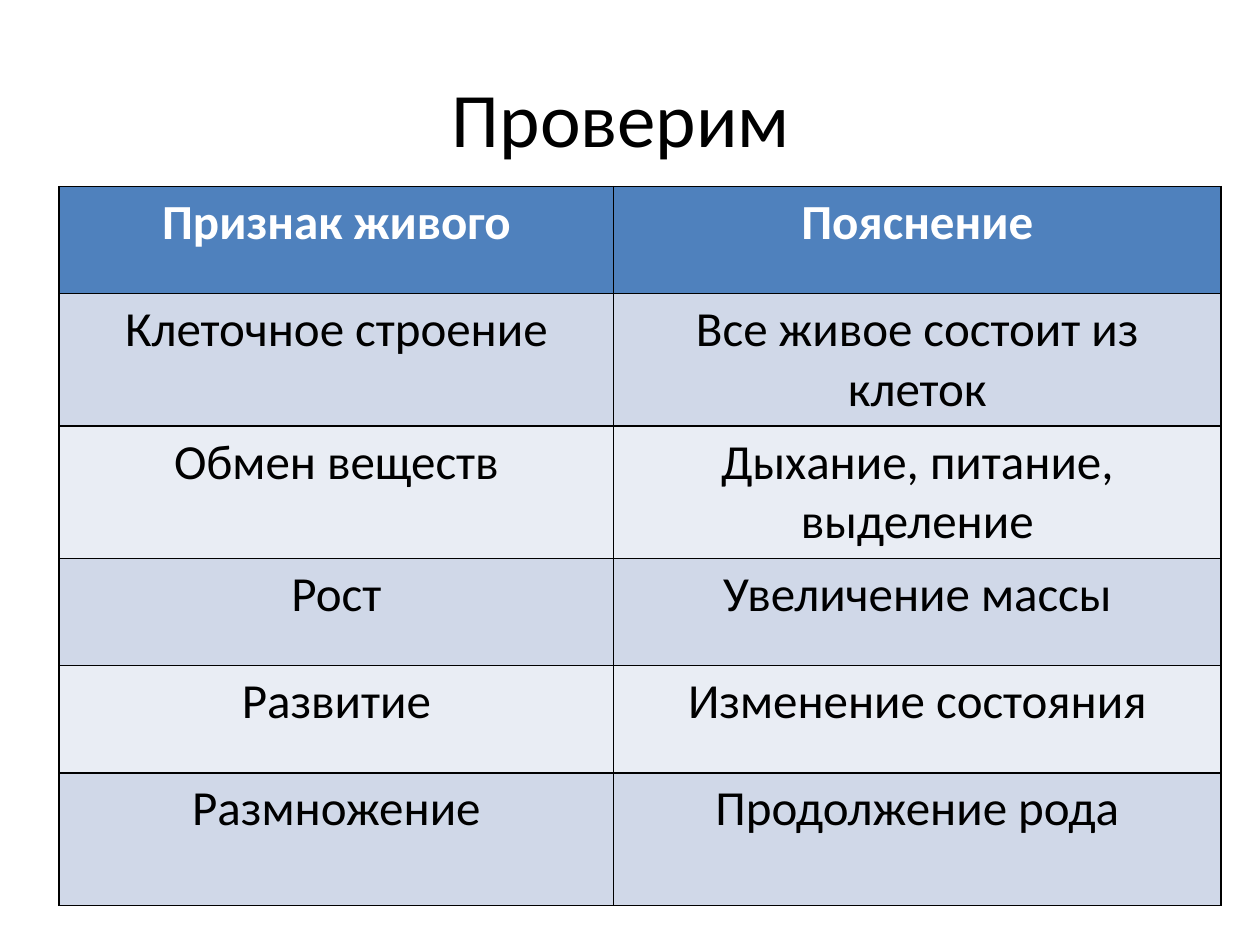
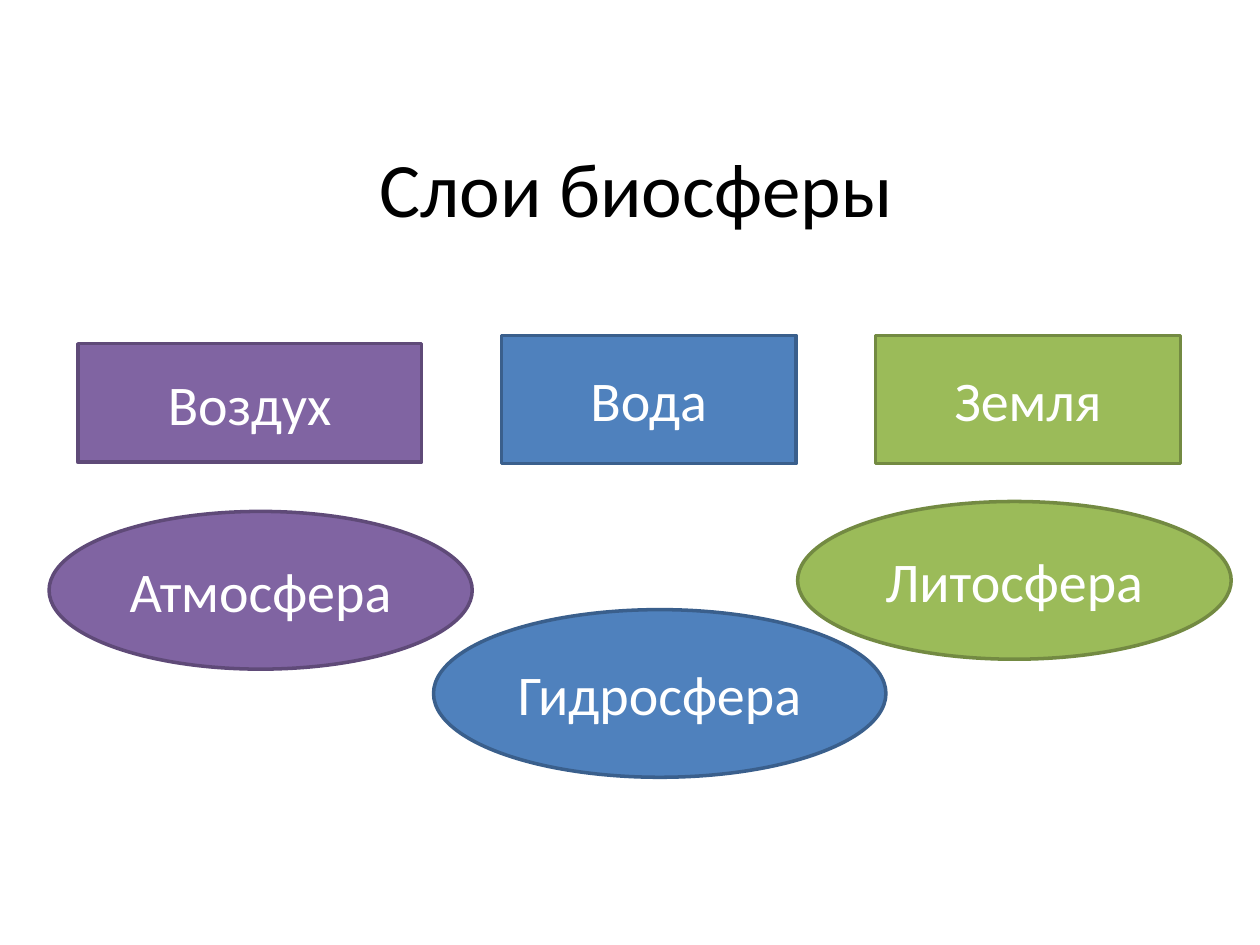
import pptx
import pptx.util
import pptx.dml.color
import pptx.enum.shapes
import pptx.enum.text
import pptx.oxml
import pptx.oxml.ns

Cm = pptx.util.Cm
Pt = pptx.util.Pt
Shape = pptx.enum.shapes.MSO_SHAPE

FONT = "Calibri"
COLORS = {
    "ink": "000000", "paper": "FFFFFF",
    "header": "4F81BD", "band_dark": "D0D8E8", "band_light": "E9EDF4",
    "air": "8064A2", "air_edge": "5F4A78",
    "water": "4F81BD", "water_edge": "3A5F8C",
    "earth": "9BBB59", "earth_edge": "738A42",
}

# Content: lengths in centimetres
TITLE_SIZE = (22.86, 3.18)
SIGNS_TITLE = ("Проверим ", 1.27, 0.76)
SIGNS = [
    ("Признак живого", "Пояснение"),
    ("Клеточное строение", "Все живое состоит из клеток"),
    ("Обмен веществ", "Дыхание, питание, выделение"),
    ("Рост", "Увеличение массы"),
    ("Развитие", "Изменение состояния"),
    ("Размножение", "Продолжение рода"),
]
TABLE_CORNER = (1.19, 3.76)
COLUMN_WIDTHS = (11.18, 12.24)
ROW_HEIGHTS = (2.16, 2.67, 2.67, 2.16, 2.16, 2.67)

LAYERS_TITLE = ("Слои биосферы", 1.4, 2.18)
# Colour, medium and its box, layer and its box
LAYERS = [
    ("air", "Воздух", (1.57, 6.93, 6.93, 2.39),
     "Атмосфера", (0.99, 10.31, 8.53, 3.18)),
    ("water", "Вода", (10.11, 6.76, 5.94, 2.59),
     "Гидросфера", (8.74, 12.29, 9.12, 3.38)),
    ("earth", "Земля", (17.65, 6.76, 6.15, 2.59),
     "Литосфера", (16.08, 10.11, 8.74, 3.18)),
]


def color(name):
    return pptx.dml.color.RGBColor.from_string(COLORS[name])


def write(frame, text, size=32, ink="ink", bold=False, middle=True):
    """Put one centred line of formatted text into a text frame."""
    frame.word_wrap = True
    anchor = pptx.enum.text.MSO_ANCHOR
    frame.vertical_anchor = anchor.MIDDLE if middle else anchor.TOP
    para = frame.paragraphs[0]
    para.alignment = pptx.enum.text.PP_ALIGN.CENTER
    span = para.add_run()
    span.text = text
    span.font.name = FONT
    span.font.size = Pt(size)
    span.font.bold = bold
    span.font.color.rgb = color(ink)


def add_page(deck, title, left, top):
    page = deck.slides.add_slide(deck.slide_layouts[6])
    box = page.shapes.add_textbox(Cm(left), Cm(top), *map(Cm, TITLE_SIZE))
    write(box.text_frame, title, size=44)
    return page


def add_borders(cell):
    """Black 1 pt lines go ahead of the fill in the cell properties."""
    properties = cell._tc.get_or_add_tcPr()
    for index, side in enumerate(("lnL", "lnR", "lnT", "lnB")):
        properties.insert(index, pptx.oxml.parse_xml(
            f'<a:{side} {pptx.oxml.ns.nsdecls("a")} w="{Pt(1)}"><a:solidFill>'
            f'<a:srgbClr val="{COLORS["ink"]}"/></a:solidFill></a:{side}>'))


def add_signs_table(page):
    table = page.shapes.add_table(
        len(SIGNS), len(COLUMN_WIDTHS), *map(Cm, TABLE_CORNER),
        Cm(sum(COLUMN_WIDTHS)), Cm(sum(ROW_HEIGHTS))).table
    for column, width in zip(table.columns, COLUMN_WIDTHS):
        column.width = Cm(width)
    for index, (row, height, texts) in enumerate(
            zip(table.rows, ROW_HEIGHTS, SIGNS)):
        row.height = Cm(height)
        header = index == 0
        band = "header" if header else ("band_light", "band_dark")[index % 2]
        for cell, text in zip(row.cells, texts):
            cell.fill.solid()
            cell.fill.fore_color.rgb = color(band)
            add_borders(cell)
            write(cell.text_frame, text, size=28, bold=header, middle=False,
                  ink="paper" if header else "ink")


def add_figure(page, kind, box, text, fill):
    figure = page.shapes.add_shape(kind, *map(Cm, box))
    figure.shadow.inherit = False
    figure.fill.solid()
    figure.fill.fore_color.rgb = color(fill)
    figure.line.color.rgb = color(fill + "_edge")
    figure.line.width = Pt(2)
    write(figure.text_frame, text, ink="paper")


def main():
    deck = pptx.Presentation()
    deck.slide_width, deck.slide_height = Cm(25.4), Cm(19.05)

    # Signs of life
    add_signs_table(add_page(deck, *SIGNS_TITLE))

    # Layers of the biosphere
    page = add_page(deck, *LAYERS_TITLE)
    for fill, medium, medium_box, layer, layer_box in LAYERS:
        add_figure(page, Shape.RECTANGLE, medium_box, medium, fill)
        add_figure(page, Shape.OVAL, layer_box, layer, fill)

    deck.save("out.pptx")


if __name__ == "__main__":
    main()
